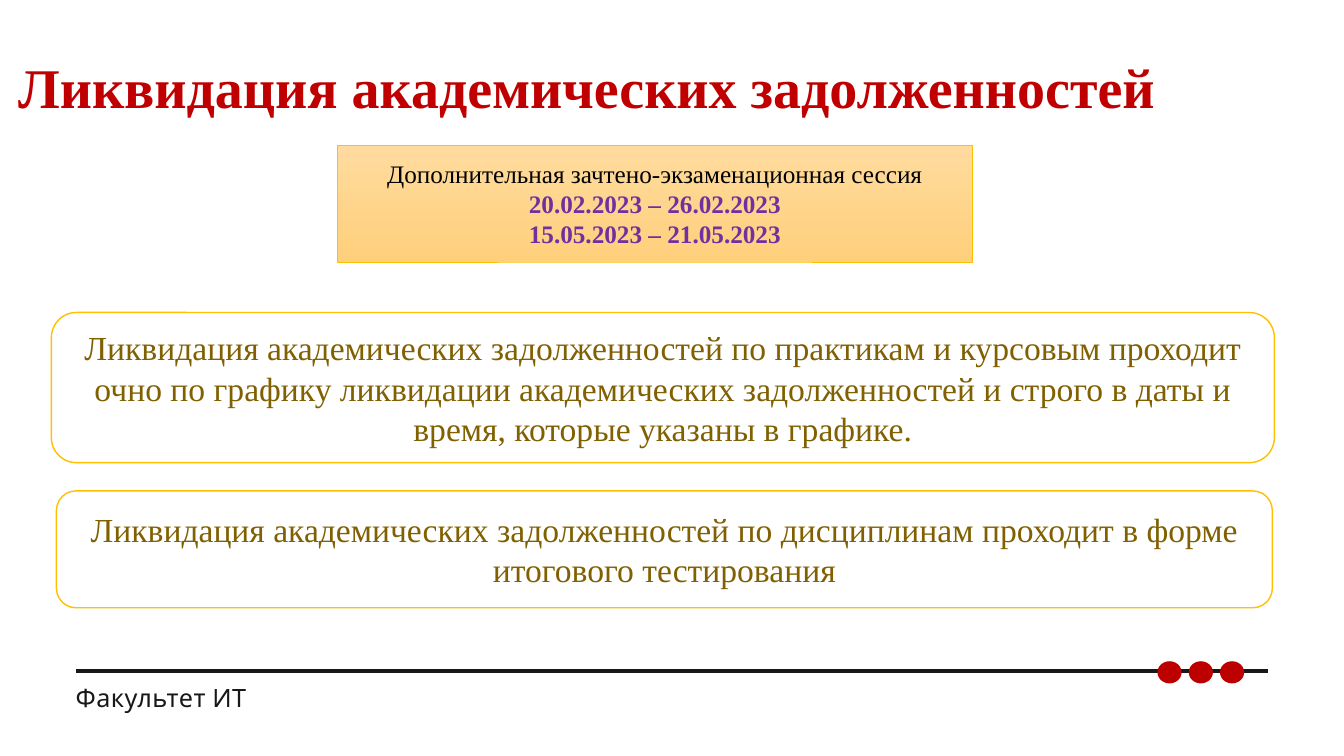
from lxml.etree import SubElement
from pptx import Presentation
from pptx.dml.color import RGBColor
from pptx.enum.shapes import MSO_CONNECTOR, MSO_SHAPE
from pptx.enum.text import MSO_ANCHOR, MSO_AUTO_SIZE, PP_ALIGN
from pptx.oxml.ns import qn
from pptx.util import Inches, Pt

RED = RGBColor(0xC0, 0x00, 0x00)
DOT_RED = RGBColor(0xBC, 0x00, 0x00)
BLACK = RGBColor(0x00, 0x00, 0x00)
INK = RGBColor(0x18, 0x18, 0x18)
PURPLE = RGBColor(0x70, 0x30, 0xA0)
BROWN = RGBColor(0x80, 0x60, 0x00)
GOLD = RGBColor(0xFF, 0xC0, 0x00)
PEACH_LIGHT = RGBColor(0xFF, 0xDB, 0x9E)
PEACH_DARK = RGBColor(0xFF, 0xD0, 0x7C)
WHITE = RGBColor(0xFF, 0xFF, 0xFF)


class SlideBuilder:
    """Holds the text style and the current slide."""

    serif = "Times New Roman"
    sans = "Karla"

    def __init__(self, slide):
        self.slide = slide

    def add_span(self, para, text, size, color, bold=False, font=None):
        span = para.add_run()
        span.text = text
        span.font.name = font or self.serif
        span.font.size = Pt(size)
        span.font.bold = bold
        span.font.color.rgb = color
        return span

    def title(self, text, left, top, width, height):
        box = self.slide.shapes.title
        box.left, box.top = Inches(left), Inches(top)
        box.width, box.height = Inches(width), Inches(height)
        frame = box.text_frame
        frame.auto_size = MSO_AUTO_SIZE.NONE
        frame.vertical_anchor = MSO_ANCHOR.MIDDLE
        para = frame.paragraphs[0]
        para.alignment = PP_ALIGN.LEFT
        para.line_spacing = 0.9
        self.add_span(para, text, 40, RED, bold=True)

    def shape(self, kind, left, top, width, height):
        shape = self.slide.shapes.add_shape(
            kind, Inches(left), Inches(top), Inches(width), Inches(height))
        shape.shadow.inherit = False
        return shape

    def panel(self, kind, left, top, width, height, lines, size, line_width):
        """Outlined box; lines are (text, color, bold)."""
        box = self.shape(kind, left, top, width, height)
        box.fill.solid()
        box.fill.fore_color.rgb = WHITE
        box.line.color.rgb = GOLD
        box.line.width = Pt(line_width)
        frame = box.text_frame
        frame.word_wrap = True
        frame.vertical_anchor = MSO_ANCHOR.MIDDLE
        for index, (text, color, bold) in enumerate(lines):
            para = frame.add_paragraph() if index else frame.paragraphs[0]
            para.alignment = PP_ALIGN.CENTER
            self.add_span(para, text, size, color, bold)
        return box

    def gradient(self, box, top_color, bottom_color):
        box.fill.gradient()
        box.fill.gradient_angle = 270
        for stop, color in zip(box.fill.gradient_stops, (top_color, bottom_color)):
            stop.color.rgb = color

    def rule(self, left, right, y):
        line = self.slide.shapes.add_connector(
            MSO_CONNECTOR.STRAIGHT, Inches(left), Inches(y), Inches(right), Inches(y))
        line.line.color.rgb = INK
        line.line.width = Pt(3.1)
        SubElement(line._element.spPr, qn("a:effectLst"))

    def dot(self, left, top):
        dot = self.shape(MSO_SHAPE.OVAL, left, top, 0.24, 0.22)
        dot.fill.solid()
        dot.fill.fore_color.rgb = DOT_RED
        dot.line.fill.background()

    def footer(self, text, left, top, width, height):
        box = self.slide.shapes.add_textbox(
            Inches(left), Inches(top), Inches(width), Inches(height))
        frame = box.text_frame
        frame.word_wrap = True
        frame.margin_left = frame.margin_right = 0
        frame.margin_top = frame.margin_bottom = 0
        span = self.add_span(frame.paragraphs[0], text, 18, INK, font=self.sans)
        span._r.get_or_add_rPr().set("spc", "30")


def main():
    deck = Presentation()
    deck.slide_width, deck.slide_height = Inches(13.33), Inches(7.5)
    page = SlideBuilder(deck.slides.add_slide(deck.slide_layouts[5]))

    # Title
    page.title("Ликвидация академических задолженностей", 0.08, 0.17, 12.79, 1.45)

    # Session dates
    session = page.panel(MSO_SHAPE.RECTANGLE, 3.35, 1.44, 6.29, 1.16, [
        ("Дополнительная зачтено-экзаменационная сессия", BLACK, False),
        ("20.02.2023 – 26.02.2023", PURPLE, True),
        ("15.05.2023 – 21.05.2023", PURPLE, True),
    ], 18, 0.5)
    page.gradient(session, PEACH_LIGHT, PEACH_DARK)

    # Footer with rule and dots
    page.footer("Факультет ИТ", 0.75, 6.77, 2.34, 0.24)
    page.rule(0.75, 12.58, 6.66)
    for index in range(3):
        page.dot(11.48 + 0.31 * index, 6.56)

    # Rules for clearing debts
    rules = [
        (0.51, 3.1, 12.13, 1.49,
         "Ликвидация академических задолженностей по практикам и курсовым проходит "
         "очно по графику ликвидации академических задолженностей и строго в даты и "
         "время, которые указаны в графике."),
        (0.56, 4.87, 12.06, 1.16,
         "Ликвидация академических задолженностей по дисциплинам проходит в форме "
         "итогового тестирования"),
    ]
    for left, top, width, height, text in rules:
        page.panel(MSO_SHAPE.ROUNDED_RECTANGLE, left, top, width, height,
                   [(text, BROWN, False)], 24, 1)

    deck.save("out.pptx")


if __name__ == "__main__":
    main()
